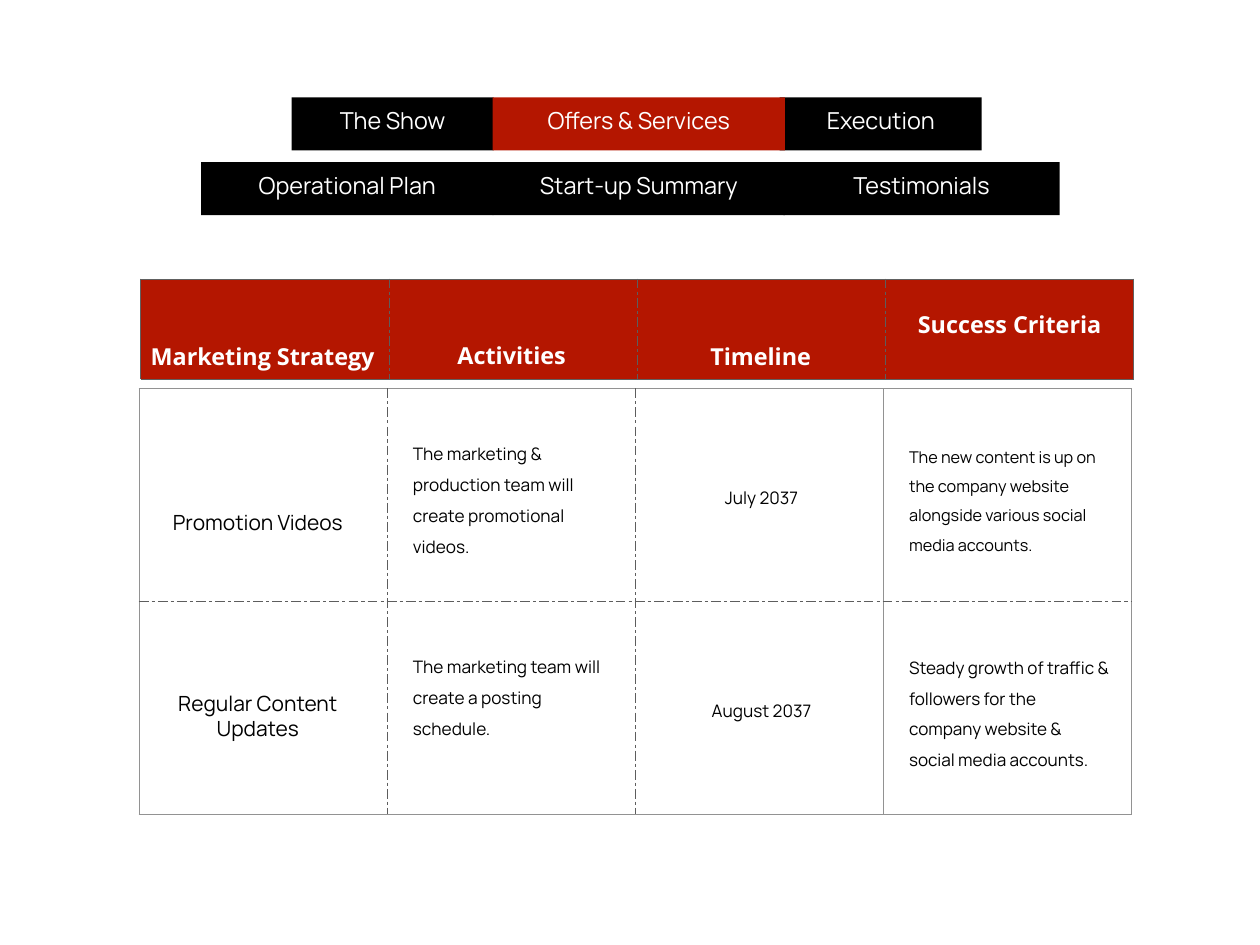
"""Build the marketing strategy slide with its section tabs and activity table."""
from lxml import etree
from pptx import Presentation
from pptx.dml.color import RGBColor
from pptx.enum.shapes import MSO_SHAPE
from pptx.enum.text import MSO_ANCHOR, PP_ALIGN
from pptx.oxml.ns import qn
from pptx.util import Inches, Pt

RECTANGLE = MSO_SHAPE.RECTANGLE
TOP, MIDDLE = MSO_ANCHOR.TOP, MSO_ANCHOR.MIDDLE
LEFT, CENTER = PP_ALIGN.LEFT, PP_ALIGN.CENTER

BLACK, WHITE, RED = "000000", "FFFFFF", "B41600"
DASH_GRAY, BODY_GRAY, HEADER_GRAY = "5D5D5D", "929292", "606060"
BODY_FONT, HEADING_FONT = "Manrope", "Open Sans"

COLUMN, ROW = 2.8, 2.4
GRID_LEFT, GRID_TOP = 1.57, 4.39
HEADER_LEFT, HEADER_TOP, HEADER_ROW = 1.59, 3.15, 1.13
TAB_HEIGHT, TAB_PADDING, TAB_LIFT = 0.6, 0.25, 0.04

TABS = [
    ("Operational Plan", 2.27, 1.83, 3.3, BLACK),
    ("Testimonials", 8.84, 1.83, 3.12, BLACK),
    ("Start-up Summary", 5.56, 1.83, 3.3, BLACK),
    ("The Show", 3.29, 1.1, 2.28, BLACK),
    ("Execution", 8.8, 1.1, 2.28, BLACK),
    ("Offers & Services", 5.56, 1.1, 3.3, RED),
]
HEADINGS = [
    ("Marketing Strategy", 3.42, TOP, 2.32),
    ("Activities", 3.4, TOP, 2.32),
    ("Timeline", 3.42, TOP, 2.32),
    ("Success Criteria", 3.42, MIDDLE, 1),
]
STRATEGIES = [
    ("Promotion Videos", 0.92, 0.47, 2.47),
    ("Regular Content\nUpdates", 0.98, 0.82, 1),
]
ACTIVITIES = [
    "The marketing & production team will create promotional videos.",
    "The marketing team will create a posting schedule.",
]
DATES = ["July 2037", "August 2037"]
CRITERIA = [
    ("The new content is up on the company website alongside various social media accounts.", 13.2),
    ("Steady growth of traffic & followers for the company website & social media accounts.", 13.9),
]


def color(value):
    """Turn a hex string into a colour."""
    return RGBColor.from_string(value)


def add_text(slide, text, left, top, width, height, *, size, font=BODY_FONT, ink=BLACK,
             bold=False, align=LEFT, anchor=TOP, spacing=1):
    """Add a text box with one format for all its paragraphs."""
    box = slide.shapes.add_textbox(Inches(left), Inches(top), Inches(width), Inches(height))
    frame = box.text_frame
    frame.word_wrap = True
    frame.vertical_anchor = anchor
    frame.margin_left = frame.margin_right = Inches(0.03)
    frame.margin_top = frame.margin_bottom = Inches(0.03)
    frame.text = text
    for paragraph in frame.paragraphs:
        paragraph.alignment = align
        paragraph.line_spacing = float(spacing)
        paragraph.font.name = font
        paragraph.font.size = Pt(size)
        paragraph.font.bold = bold
        paragraph.font.color.rgb = color(ink)


def add_tab(slide, label, left, top, width, fill):
    """Add a section tab and its centred label."""
    shape = slide.shapes.add_shape(
        RECTANGLE, Inches(left), Inches(top), Inches(width), Inches(TAB_HEIGHT))
    shape.shadow.inherit = False
    shape.fill.solid()
    shape.fill.fore_color.rgb = color(fill)
    shape.line.fill.background()
    add_text(slide, label, left + TAB_PADDING, top - TAB_LIFT, width - 2 * TAB_PADDING,
             TAB_HEIGHT, size=19, ink=WHITE, align=CENTER, anchor=MIDDLE)


def set_borders(cell, edges, solid_color):
    """Draw the four cell edges, each dashed or solid."""
    properties = cell._tc.get_or_add_tcPr()
    for index, (side, dashed) in enumerate(edges):
        line = etree.Element(qn(f"a:ln{side}"), w=str(Pt(0.75)))
        fill = etree.SubElement(line, qn("a:solidFill"))
        etree.SubElement(fill, qn("a:srgbClr"), val=DASH_GRAY if dashed else solid_color)
        etree.SubElement(line, qn("a:prstDash"), val="dashDot" if dashed else "solid")
        properties.insert(index, line)


def add_grid(slide, left, top, rows, row_height, *, fill, solid_color, dashed_columns, dashed_rows):
    """Add a four-column table with dashed lines at the given grid indexes."""
    columns = len(HEADINGS)
    table = slide.shapes.add_table(
        rows, columns, Inches(left), Inches(top),
        Inches(columns * COLUMN), Inches(rows * row_height)).table
    table.first_row = table.horz_banding = False
    for row in range(rows):
        for column in range(columns):
            cell = table.cell(row, column)
            cell.fill.solid()
            cell.fill.fore_color.rgb = color(fill)
            edges = [("L", column in dashed_columns), ("R", column + 1 in dashed_columns),
                     ("T", row in dashed_rows), ("B", row + 1 in dashed_rows)]
            set_borders(cell, edges, solid_color)


def add_headings(slide):
    """Add the column headings over the red row."""
    for column, (text, top, anchor, spacing) in enumerate(HEADINGS):
        add_text(slide, text, 1.55 + column * 2.81, top, 2.83, 0.47, size=19, font=HEADING_FONT,
                 ink=WHITE, bold=True, align=CENTER, anchor=anchor, spacing=spacing)


def add_entry(slide, row, column, text, **text_format):
    """Add body text inside one grid cell."""
    add_text(slide, text, GRID_LEFT + column * COLUMN + 0.26, GRID_TOP + row * ROW + 0.47,
             2.33, 1.48, **text_format)


def add_entries(slide):
    """Add the text of every strategy row."""
    for row, (text, offset, height, spacing) in enumerate(STRATEGIES):
        add_text(slide, text, GRID_LEFT + 0.11, GRID_TOP + row * ROW + offset, 2.46, height,
                 size=17, align=CENTER, spacing=spacing)
        add_entry(slide, row, 1, ACTIVITIES[row], size=14, spacing=1.5)
        add_entry(slide, row, 2, DATES[row], size=14, align=CENTER, anchor=MIDDLE, spacing=1.2)
        criterion, size = CRITERIA[row]
        add_entry(slide, row, 3, criterion, size=size, anchor=MIDDLE, spacing=1.5)


def main():
    """Build and save the slide."""
    presentation = Presentation()
    presentation.slide_width = Inches(14.22)
    presentation.slide_height = Inches(10.67)
    slide = presentation.slides.add_slide(presentation.slide_layouts[6])
    for tab in TABS:
        add_tab(slide, *tab)
    add_grid(slide, GRID_LEFT, GRID_TOP, len(STRATEGIES), ROW, fill=WHITE,
             solid_color=BODY_GRAY, dashed_columns={1, 2}, dashed_rows={1})
    add_grid(slide, HEADER_LEFT, HEADER_TOP, 1, HEADER_ROW, fill=RED,
             solid_color=HEADER_GRAY, dashed_columns={1, 2, 3}, dashed_rows=set())
    add_headings(slide)
    add_entries(slide)
    presentation.save("out.pptx")


if __name__ == "__main__":
    main()
